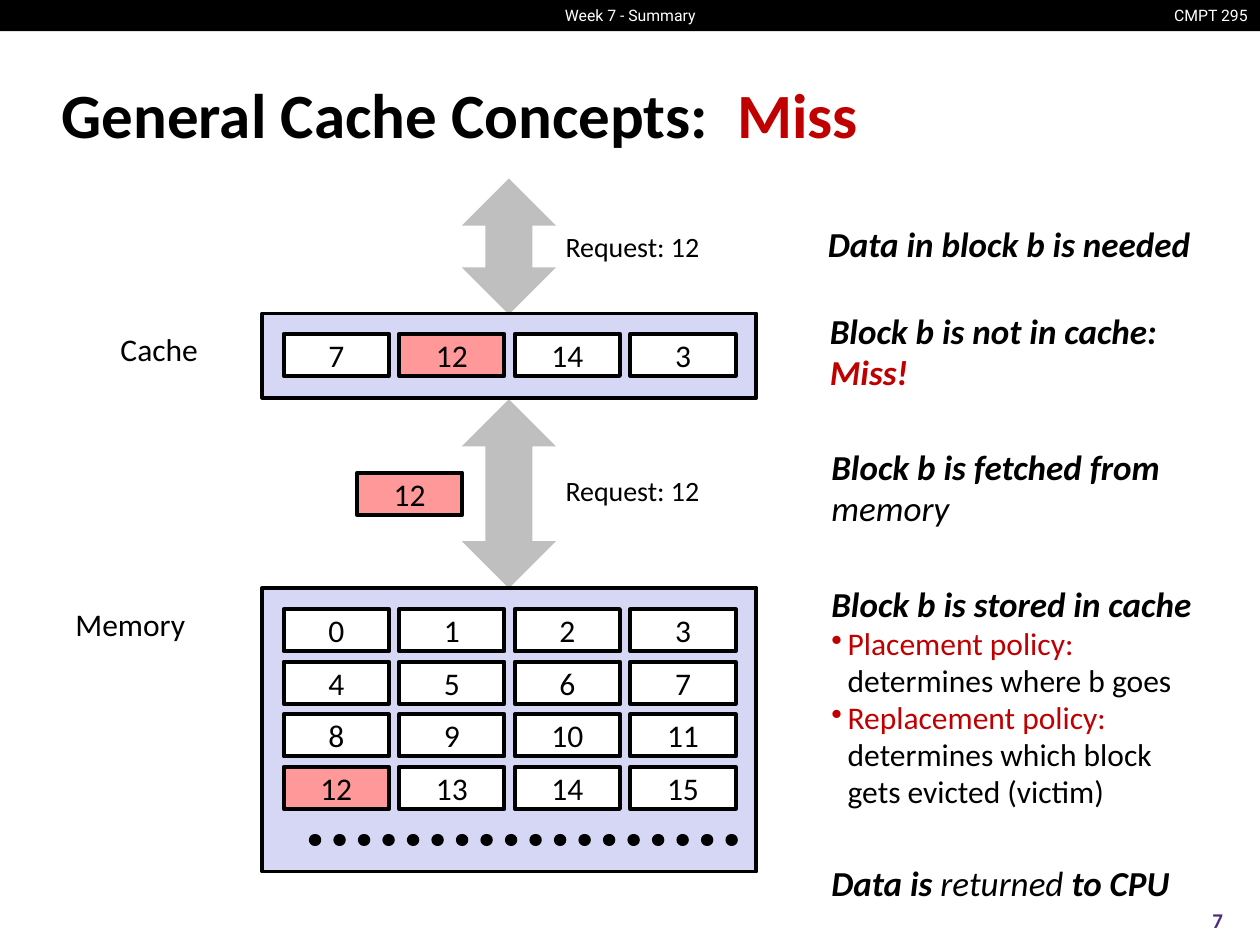
"""Build the slide on general cache concepts: a miss."""
from lxml.etree import SubElement
from pptx import Presentation
from pptx.dml.color import RGBColor
from pptx.enum.dml import MSO_LINE
from pptx.enum.shapes import MSO_CONNECTOR, MSO_SHAPE
from pptx.enum.text import MSO_ANCHOR, PP_ALIGN
from pptx.oxml.ns import qn
from pptx.util import Cm, Pt

BLACK, WHITE, RED = "000000", "FFFFFF", "C00000"
PINK, LAVENDER, GREY, PURPLE = "FF9999", "D6D6F5", "BFBFBF", "4B2A85"
BLOCK_WIDTH, BLOCK_HEIGHT = 2.12, 0.85
COLUMN_STEP, ROW_STEP, GRID_LEFT = 2.33, 1.06, 5.72
BULLET_INDENT = 0.33
STRONG = {"size": 20, "bold": True, "italic": True}
LIGHT = {"size": 20, "italic": True}
HEADER = {"name": "Roboto", "size": 9, "color": WHITE}


def rgb(value):
    return RGBColor.from_string(value)


class SlideBuilder:
    def __init__(self, slide, font):
        self.slide = slide
        self.font = font

    def fill_frame(self, frame, paras, align=PP_ALIGN.LEFT, anchor=MSO_ANCHOR.TOP,
                   wrap=False, spacing=1.0):
        frame.word_wrap = wrap
        frame.vertical_anchor = anchor
        for index, spans in enumerate(paras):
            para = frame.paragraphs[0] if index == 0 else frame.add_paragraph()
            para.alignment = align
            para.line_spacing = spacing
            for text, style in spans:
                self.add_span(para, text, style)
        return frame

    def add_span(self, para, text, style):
        values = {"name": self.font, "bold": False, "italic": False, "color": BLACK} | style
        color, size = values.pop("color"), values.pop("size")
        for number, line in enumerate(text.split("\n")):
            if number:
                para.add_line_break()
            if not line:
                continue
            span = para.add_run()
            span.text = line
            span.font.size = Pt(size)
            span.font.color.rgb = rgb(color)
            for key, value in values.items():
                setattr(span.font, key, value)

    def title(self, place, spans):
        title = self.slide.shapes.title
        for key, value in zip(("left", "top", "width", "height"), place):
            setattr(title, key, Cm(value))
        self.fill_frame(title.text_frame, [spans], anchor=MSO_ANCHOR.MIDDLE, wrap=True)

    def text(self, place, paras, **layout):
        box = self.slide.shapes.add_textbox(*map(Cm, place))
        return self.fill_frame(box.text_frame, paras, **layout)

    def note(self, place, *paras):
        return self.text(place, paras, anchor=MSO_ANCHOR.MIDDLE, spacing=0.98)

    def bullet(self, para):
        properties = para._p.get_or_add_pPr()
        properties.set("marL", str(Cm(BULLET_INDENT)))
        properties.set("indent", str(-Cm(BULLET_INDENT)))
        SubElement(properties, qn("a:buChar")).set("char", "•")

    def shape(self, kind, place, fill, outlined=False):
        shape = self.slide.shapes.add_shape(kind, *map(Cm, place))
        shape.shadow.inherit = False
        shape.fill.solid()
        shape.fill.fore_color.rgb = rgb(fill)
        if outlined:
            shape.line.color.rgb = rgb(BLACK)
            shape.line.width = Pt(2.25)
        else:
            shape.line.fill.background()
        return shape

    def block(self, left, top, label):
        fill = PINK if label == 12 else WHITE
        block = self.shape(MSO_SHAPE.RECTANGLE, (left, top, BLOCK_WIDTH, BLOCK_HEIGHT),
                           fill, outlined=True)
        self.fill_frame(block.text_frame, [[(str(label), {"size": 18})]],
                        align=PP_ALIGN.CENTER, anchor=MSO_ANCHOR.MIDDLE)

    def block_grid(self, top, labels):
        for index, label in enumerate(labels):
            row, column = divmod(index, 4)
            self.block(GRID_LEFT + column * COLUMN_STEP, top + row * ROW_STEP, label)

    def dotted_line(self, left, right, top):
        line = self.slide.shapes.add_connector(
            MSO_CONNECTOR.STRAIGHT, *map(Cm, (left, top, right, top)))
        line.line.color.rgb = rgb(BLACK)
        line.line.width = Pt(7)
        line.line.dash_style = MSO_LINE.ROUND_DOT
        properties = line._element.spPr
        properties.find(qn("a:ln")).set("cap", "rnd")
        SubElement(properties, qn("a:effectLst"))


def main():
    deck = Presentation()
    deck.slide_width, deck.slide_height = Cm(25.4), Cm(19.05)
    page = SlideBuilder(deck.slides.add_slide(deck.slide_layouts[5]), "Calibri")

    page.shape(MSO_SHAPE.RECTANGLE, (0, 0, 25.4, 0.63), BLACK)
    for place, text, align in (
        ((23.34, 0, 2.06, 0.63), "CMPT 295", PP_ALIGN.RIGHT),
        ((10.92, 0, 3.57, 0.63), "Week 7 - Summary", PP_ALIGN.CENTER),
    ):
        page.text(place, [[(text, HEADER)]], align=align, anchor=MSO_ANCHOR.MIDDLE)
    heading = {"size": 36, "bold": True}
    page.title((0.99, 1.22, 23.34, 2.11),
               [("General Cache Concepts:  ", heading), ("Miss", heading | {"color": RED})])
    page.text((23.7, 18.03, 1.7, 1.02),
              [[("7", {"size": 12, "bold": True, "color": PURPLE})]],
              align=PP_ALIGN.CENTER, anchor=MSO_ANCHOR.MIDDLE)

    for top, height in ((3.6, 2.74), (8.05, 3.81)):
        page.shape(MSO_SHAPE.UP_DOWN_ARROW, (9.31, top, 1.9, height), GREY)
    for top, height in ((11.85, 5.72), (6.32, 1.7)):
        page.shape(MSO_SHAPE.RECTANGLE, (5.29, top, 9.96, height), LAVENDER, outlined=True)
    page.block_grid(6.73, (7, 12, 14, 3))
    page.block_grid(12.28, range(16))
    page.block(7.2, 9.53, 12)
    page.dotted_line(6.35, 14.82, 16.93)

    for place, label in (((2.18, 6.53, 2.64, 1.27), "Cache"),
                         ((1.27, 12.07, 3.56, 1.27), "Memory")):
        page.text(place, [[(label, {"size": 18})]])
    for top in (4.5, 9.42):
        page.text((11.1, top, 3.3, 0.94), [[("Request: 12", {"size": 16})]],
                  align=PP_ALIGN.CENTER)

    page.note((16.44, 4.39, 7.85, 1.09), [("Data in block b is needed", STRONG)])
    page.note((16.48, 6.15, 7.14, 1.93), [("Block b is not in cache:", STRONG)],
              [("Miss!", STRONG | {"color": RED})])
    page.note((16.51, 8.89, 7.19, 1.93), [("Block b is fetched from", STRONG)],
              [("memory", LIGHT)])
    policy, detail = {"size": 18, "color": RED}, {"size": 18}
    stored = page.note(
        (16.51, 11.63, 7.8, 4.88),
        [("Block b is stored in cache", STRONG)],
        [("Placement policy:\n", policy), ("determines where b goes", detail)],
        [("Replacement policy:\n", policy),
         ("determines which block\ngets evicted (victim)", detail)])
    for para in stored.paragraphs[1:]:
        page.bullet(para)
    page.note((16.51, 17.27, 7.42, 1.09),
              [("Data is ", STRONG), ("returned ", LIGHT), ("to CPU", STRONG)])

    deck.save("out.pptx")


if __name__ == "__main__":
    main()
